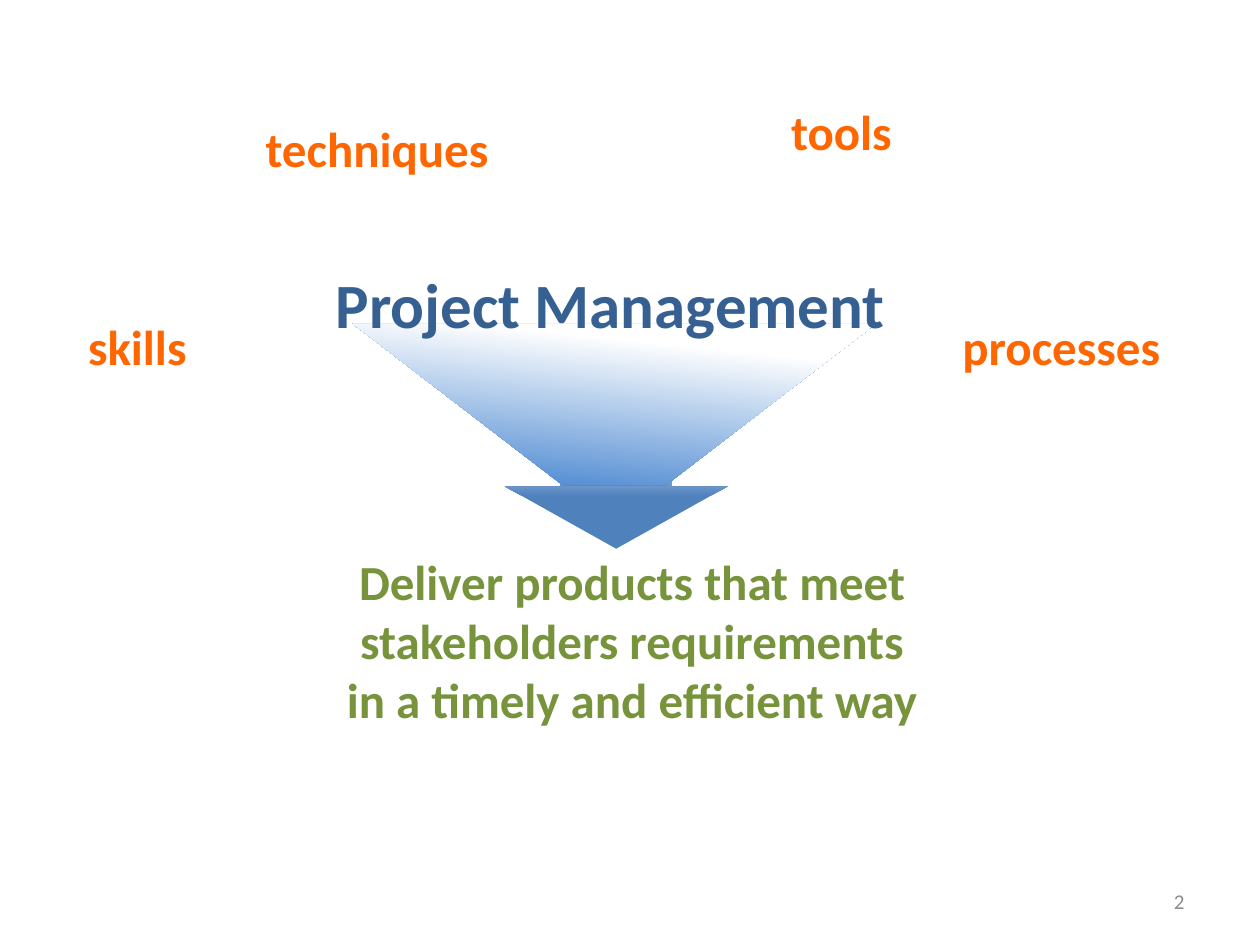
from pptx import Presentation
from pptx.dml.color import RGBColor
from pptx.enum.shapes import MSO_SHAPE
from pptx.enum.text import MSO_ANCHOR, MSO_AUTO_SIZE, PP_ALIGN
from pptx.util import Inches, Pt

ORANGE = RGBColor(0xFF, 0x66, 0x00)
GREEN = RGBColor(0x77, 0x93, 0x3C)
NAVY = RGBColor(0x37, 0x60, 0x92)
GRAY = RGBColor(0x8C, 0x8C, 0x8C)
STEEL = RGBColor(0x4F, 0x81, 0xBD)
BLUE = RGBColor(0x3F, 0x80, 0xCE)
WHITE = RGBColor(0xFF, 0xFF, 0xFF)
LEFT, CENTER, RIGHT = PP_ALIGN.LEFT, PP_ALIGN.CENTER, PP_ALIGN.RIGHT
TOP, MIDDLE = MSO_ANCHOR.TOP, MSO_ANCHOR.MIDDLE
FIT_TEXT = MSO_AUTO_SIZE.SHAPE_TO_FIT_TEXT
FIXED = MSO_AUTO_SIZE.NONE
RIGHT_ARROW, TRAPEZOID = MSO_SHAPE.RIGHT_ARROW, MSO_SHAPE.TRAPEZOID

COLUMNS, ROWS = 100, 75
INPUT_LABELS = [
    ("skills", 6, 24.6, 9.9),
    ("tools", 61.8, 7.6, 10.1),
    ("techniques", 20.1, 8.9, 19.9),
    ("processes", 75.4, 24.6, 17.9),
]


class SlideBuilder:
    font = "Calibri"

    def __init__(self, presentation):
        self.column = presentation.slide_width / COLUMNS
        self.row = presentation.slide_height / ROWS
        self.slide = presentation.slides.add_slide(presentation.slide_layouts[6])

    def area(self, left, top, width, height):
        return (round(left * self.column), round(top * self.row),
                round(width * self.column), round(height * self.row))

    def text(self, lines, area, size, color, bold=True, align=LEFT,
             anchor=TOP, wrap=True, auto_size=FIXED):
        frame = self.slide.shapes.add_textbox(*self.area(*area)).text_frame
        frame.word_wrap = wrap
        frame.auto_size = auto_size
        frame.vertical_anchor = anchor
        for index, line in enumerate(lines):
            paragraph = frame.add_paragraph() if index else frame.paragraphs[0]
            paragraph.alignment = align
            run = paragraph.add_run()
            run.text = line
            run.font.name = self.font
            run.font.size = Pt(size)
            run.font.bold = bold
            run.font.color.rgb = color
        return frame

    def gradient_shape(self, kind, area, adjustments, stops, angle):
        shape = self.slide.shapes.add_shape(kind, *self.area(*area))
        shape.shadow.inherit = False
        shape.line.fill.background()
        for index, value in enumerate(adjustments):
            shape.adjustments[index] = value
        shape.fill.gradient()
        shape.fill.gradient_angle = angle
        for stop, (position, color) in zip(shape.fill.gradient_stops, stops):
            stop.position = position
            stop.color.rgb = color
        return shape


def main():
    presentation = Presentation()
    presentation.slide_width = Inches(10)
    presentation.slide_height = Inches(7.5)
    builder = SlideBuilder(presentation)

    for label, left, top, width in INPUT_LABELS:
        builder.text([label], (left, top, width, 5.7), 28, ORANGE,
                     wrap=False, auto_size=FIT_TEXT)
    builder.text(["Deliver products that meet stakeholders requirements",
                  "in a timely and efficient way"],
                 (22.2, 43.3, 55.9, 15.1), 28, GREEN,
                 align=CENTER, auto_size=FIT_TEXT)

    arrow = builder.gradient_shape(RIGHT_ARROW, (44.4, 30.2, 9, 17.7), [0.5, 0.55],
                                   [(0.46, STEEL), (1, WHITE)], 180)
    arrow.rotation = 90
    funnel = builder.gradient_shape(TRAPEZOID, (28, 25.7, 41.5, 12.8), [1.3],
                                    [(0, BLUE), (0.81, WHITE)], 276)
    funnel._element.spPr.xfrm.set("flipV", "1")

    title = builder.text(["Project Management"], (18.9, 19.9, 59.1, 14.5), 36, NAVY,
                         align=CENTER, anchor=MIDDLE)
    title.margin_bottom = Inches(0.66)
    builder.text(["2"], (71.7, 69.5, 23.3, 4), 12, GRAY, bold=False,
                 align=RIGHT, anchor=MIDDLE)

    presentation.save("out.pptx")


if __name__ == "__main__":
    main()
